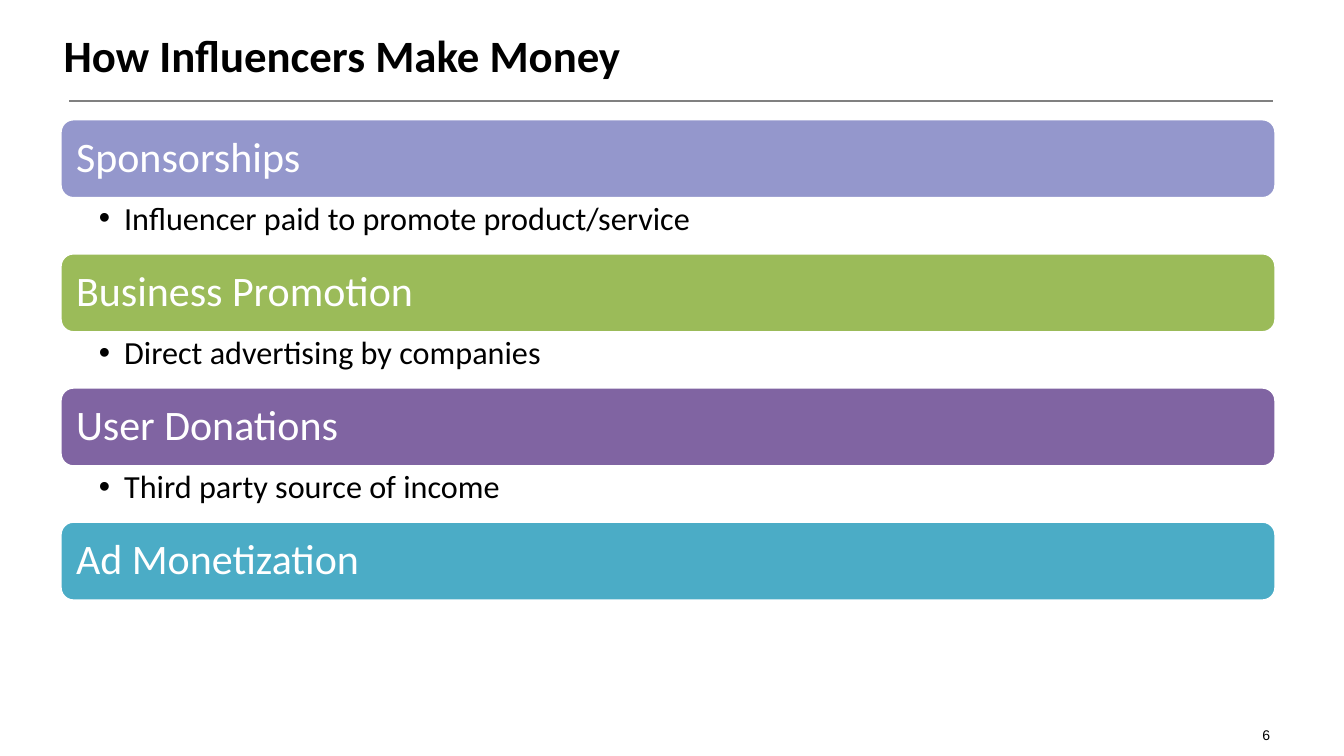
from dataclasses import dataclass

from lxml.etree import SubElement
from pptx import Presentation
from pptx.dml.color import RGBColor
from pptx.enum.shapes import MSO_CONNECTOR, MSO_SHAPE
from pptx.enum.text import MSO_ANCHOR, MSO_AUTO_SIZE, PP_ALIGN
from pptx.oxml.ns import qn
from pptx.util import Cm, Pt


@dataclass(frozen=True)
class Theme:
    font: str = "Calibri"
    number_font: str = "Arial"
    title_size: int = 32
    bar_size: int = 30
    detail_size: int = 23
    number_size: int = 10
    text: str = "000000"
    background: str = "FFFFFF"
    rule: str = "808080"
    bars: tuple = ("9497CC", "9BBB59", "8064A2", "4BACC6")


THEME = Theme()
INCOME_SOURCES = (
    ("Sponsorships", "Influencer paid to promote product/service"),
    ("Business Promotion", "Direct advertising by companies"),
    ("User Donations", "Third party source of income"),
    ("Ad Monetization", None),
)
LIST_LEFT, LIST_TOP, LIST_WIDTH = Cm(1.52), Cm(3), Cm(30.63)
BAR_HEIGHT, DETAIL_HEIGHT = Cm(2), Cm(1.38)


def color(value):
    return RGBColor.from_string(value)


def apply_format(target, values):
    for name, value in values.items():
        setattr(target, name, value)


def write_text(shape, text, size, text_color, frame_format,
               paragraph_format, font=THEME.font, bold=False):
    frame = shape.text_frame
    apply_format(frame, {"word_wrap": True, "auto_size": MSO_AUTO_SIZE.NONE,
                         **frame_format})
    paragraph = frame.paragraphs[0]
    apply_format(paragraph, paragraph_format)
    run = paragraph.add_run()
    run.text = text
    apply_format(run.font, {"name": font, "size": Pt(size), "bold": bold})
    run.font.color.rgb = color(text_color)


def add_bullet(paragraph):
    properties = paragraph._p.get_or_add_pPr()
    apply_indent = {"marL": Cm(0.64), "indent": -Cm(0.64)}
    for name, value in apply_indent.items():
        properties.set(name, str(int(value)))
    SubElement(properties, qn("a:buFont"), typeface="Arial")
    SubElement(properties, qn("a:buChar"), char="•")


def set_title(slide, text):
    title = slide.shapes.title
    apply_format(title, {"left": Cm(1.35), "top": Cm(0.56),
                         "width": Cm(30.99), "height": Cm(1.63)})
    write_text(title, text, THEME.title_size, THEME.text,
               {"vertical_anchor": MSO_ANCHOR.TOP},
               {"alignment": PP_ALIGN.LEFT}, bold=True)


def add_rule(slide):
    rule = slide.shapes.add_connector(
        MSO_CONNECTOR.STRAIGHT, Cm(1.75), Cm(2.54), Cm(32.08), Cm(2.54))
    rule.line.color.rgb = color(THEME.rule)
    rule.line.width = Pt(1.5)
    SubElement(rule._element.spPr, qn("a:effectLst"))


def add_bar(slide, top, text, fill):
    bar = slide.shapes.add_shape(
        MSO_SHAPE.ROUNDED_RECTANGLE, LIST_LEFT, top, LIST_WIDTH, BAR_HEIGHT)
    bar.shadow.inherit = False
    bar.fill.solid()
    bar.fill.fore_color.rgb = color(fill)
    bar.line.color.rgb = color(THEME.background)
    bar.line.width = Pt(2)
    # The rounded corners already inset the text by about 0.1 cm.
    write_text(bar, text, THEME.bar_size, THEME.background,
               {"vertical_anchor": MSO_ANCHOR.MIDDLE,
                "margin_left": Cm(0.3), "margin_right": Cm(0.3)},
               {"alignment": PP_ALIGN.LEFT, "line_spacing": 0.9})


def add_detail(slide, top, text):
    detail = slide.shapes.add_textbox(
        LIST_LEFT, top, LIST_WIDTH, DETAIL_HEIGHT)
    add_bullet(detail.text_frame.paragraphs[0])
    write_text(detail, text, THEME.detail_size, THEME.text,
               {"margin_left": Cm(0.97), "margin_right": Cm(0.58),
                "margin_top": Cm(0.1), "margin_bottom": Cm(0.1)},
               {"line_spacing": 0.9})


def add_slide_number(slide, number):
    box = slide.shapes.add_textbox(Cm(31.32), Cm(17.98), Cm(0.94), Cm(0.89))
    write_text(box, number, THEME.number_size, THEME.text,
               {"word_wrap": False},
               {"alignment": PP_ALIGN.RIGHT, "line_spacing": 1.5},
               font=THEME.number_font)


def main():
    presentation = Presentation()
    apply_format(presentation, {"slide_width": Cm(33.87),
                                "slide_height": Cm(19.05)})
    slide = presentation.slides.add_slide(presentation.slide_layouts[5])
    set_title(slide, "How Influencers Make Money")
    add_rule(slide)
    for index, (source, detail) in enumerate(INCOME_SOURCES):
        top = LIST_TOP + index * (BAR_HEIGHT + DETAIL_HEIGHT)
        add_bar(slide, top, source, THEME.bars[index])
        if detail:
            add_detail(slide, top + BAR_HEIGHT, detail)
    add_slide_number(slide, "6")
    presentation.save("out.pptx")


if __name__ == "__main__":
    main()
